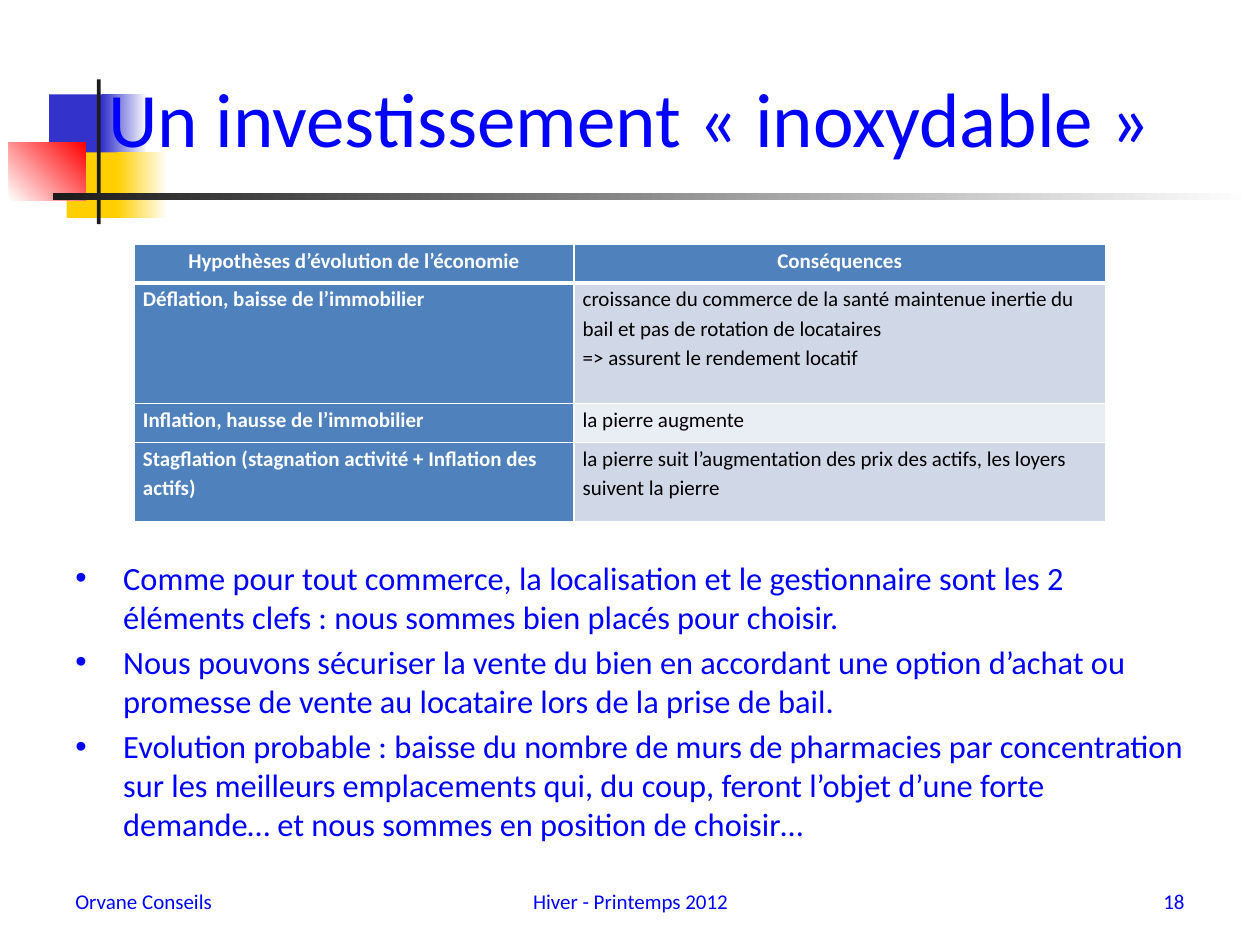
from dataclasses import dataclass
from lxml.etree import SubElement
from pptx import Presentation
from pptx.dml.color import RGBColor as RGB
from pptx.enum.shapes import MSO_SHAPE as Shape
from pptx.enum.text import MSO_ANCHOR as Anchor, MSO_AUTO_SIZE as AutoSize, PP_ALIGN as Align
from pptx.oxml.ns import qn
from pptx.util import Inches, Pt


@dataclass(frozen=True)
class Theme:
    font: str = "Calibri"
    text: str = "0000FF"
    white: str = "FFFFFF"
    black: str = "000000"
    blue: str = "3333CC"
    yellow: str = "FFCF01"
    red: str = "FF0000"
    rule: str = "1C1C1C"
    header: str = "4F81BD"
    bands: tuple = ("E9EDF4", "D0D8E8")
    title_size: float = 44
    body_size: float = 18.5
    small_size: float = 12


theme = Theme()
deck = Presentation()
deck.slide_width, deck.slide_height = Inches(10), Inches(7.5)
page = deck.slides.add_slide(deck.slide_layouts[5])


def place(left, top, width, height):
    across, down = deck.slide_width / 100, deck.slide_height / 100
    return [round(n) for n in (left * across, top * down, width * across, height * down)]


def style(para, size, color, align=Align.LEFT, bold=False):
    para.alignment = align
    para.font.name, para.font.size, para.font.bold = theme.font, Pt(size), bold
    para.font.color.rgb = RGB.from_string(color)


ornaments = [
    (3.9, 10, 4.8, 6.93, [theme.blue], 0),
    (8.1, 10, 3.6, 6.93, [theme.blue, theme.white], 0),
    (5.3, 16.13, 4.6, 6.93, [theme.yellow], 0),
    (9.3, 16.13, 4, 6.93, [theme.yellow, theme.white], 0),
    (0.7, 15.07, 6.1, 6.13, [theme.white, theme.red], 45),
    (7.7, 8.4, 0.3, 15.33, [theme.rule], 0),
    (4.2, 20.4, 95.1, 0.8, [theme.rule, theme.white], 0),
]
for *bounds, colors, angle in ornaments:
    ornament = page.shapes.add_shape(Shape.RECTANGLE, *place(*bounds))
    ornament.shadow.inherit = False
    ornament.line.fill.background()
    if len(colors) == 1:
        ornament.fill.solid()
        ornament.fill.fore_color.rgb = RGB.from_string(colors[0])
    else:
        ornament.fill.gradient()
        ornament.fill.gradient_angle = angle
        for position, (stop, color) in enumerate(zip(ornament.fill.gradient_stops, colors)):
            stop.position = position
            stop.color.rgb = RGB.from_string(color)

title = page.shapes.title
page.shapes.element.append(title.element)
title.left, title.top, title.width, title.height = place(5, 4, 90, 16.67)
title.text_frame.text = "Un investissement « inoxydable »"
title.text_frame.vertical_anchor = Anchor.MIDDLE
style(title.text_frame.paragraphs[0], theme.title_size, theme.text, Align.CENTER)

bullets = [
    "Comme pour tout commerce, la localisation et le gestionnaire sont les 2 éléments clefs : nous sommes bien placés pour choisir.",
    "Nous pouvons sécuriser la vente du bien en accordant une option d’achat ou promesse de vente au locataire lors de la prise de bail.",
    "Evolution probable : baisse du nombre de murs de pharmacies par concentration sur les meilleurs emplacements qui, du coup, feront l’objet d’une forte demande… et nous sommes en position de choisir…",
]
body = page.shapes.add_textbox(*place(5, 58.4, 90, 30.93)).text_frame
body.word_wrap = True
body.auto_size = AutoSize.NONE
body.text = "\n".join(bullets)
for para in body.paragraphs:
    style(para, theme.body_size, theme.text)
    para.space_before = Pt(0.2 * theme.body_size)
    properties = para._p.get_or_add_pPr()
    properties.set("marL", str(Inches(0.38)))
    properties.set("indent", str(-Inches(0.38)))
    bullet_font = SubElement(properties, qn("a:buFont"), typeface="Arial")
    bullet = SubElement(properties, qn("a:buChar"), char="•")
    properties.find(qn("a:defRPr")).addprevious(bullet_font)
    bullet_font.addnext(bullet)

footers = [
    (5, 23.3, "Orvane Conseils", Align.LEFT),
    (34.2, 31.7, "Hiver - Printemps 2012", Align.CENTER),
    (71.7, 23.3, "18", Align.RIGHT),
]
for left, width, words, align in footers:
    footer = page.shapes.add_textbox(*place(left, 92.67, width, 5.33)).text_frame
    footer.word_wrap = True
    footer.vertical_anchor = Anchor.MIDDLE
    footer.text = words
    style(footer.paragraphs[0], theme.small_size, theme.text, align)

rows = [
    ("Hypothèses d’évolution de l’économie", "Conséquences"),
    ("Déflation, baisse de l’immobilier",
     "croissance du commerce de la santé maintenue inertie du bail et pas de rotation de locataires\n=> assurent le rendement locatif"),
    ("Inflation, hausse de l’immobilier", "la pierre augmente"),
    ("Stagflation (stagnation activité + Inflation des actifs)",
     "la pierre suit l’augmentation des prix des actifs, les loyers suivent la pierre"),
]
table = page.shapes.add_table(4, 2, *place(10.65, 25.85, 77.1, 29.4)).table
for column, share in zip(table.columns, (34.9, 42.2)):
    column.width = round(deck.slide_width * share / 100)
for row, share in zip(table.rows, (4.1, 12.75, 4.13, 8.4)):
    row.height = round(deck.slide_height * share / 100)

for r, row in enumerate(rows):
    for c, words in enumerate(row):
        cell = table.cell(r, c)
        heading = r == 0 or c == 0
        cell.margin_left = cell.margin_right = Inches(0.07)
        cell.margin_top = cell.margin_bottom = 0
        cell.text = words
        for para in cell.text_frame.paragraphs:
            style(para, theme.small_size, theme.white if heading else theme.black,
                  Align.CENTER if r == 0 else Align.LEFT, heading)
            para.line_spacing = 1.15
        for side in "LRTB":
            thick = (r, side) in ((0, "B"), (1, "T"))
            border = SubElement(cell._tc.get_or_add_tcPr(), qn(f"a:ln{side}"), w=str(Pt(3 if thick else 1)))
            SubElement(SubElement(border, qn("a:solidFill")), qn("a:srgbClr"), val=theme.white)
        cell.fill.solid()
        cell.fill.fore_color.rgb = RGB.from_string(theme.header if heading else theme.bands[r % 2])

deck.save("out.pptx")
